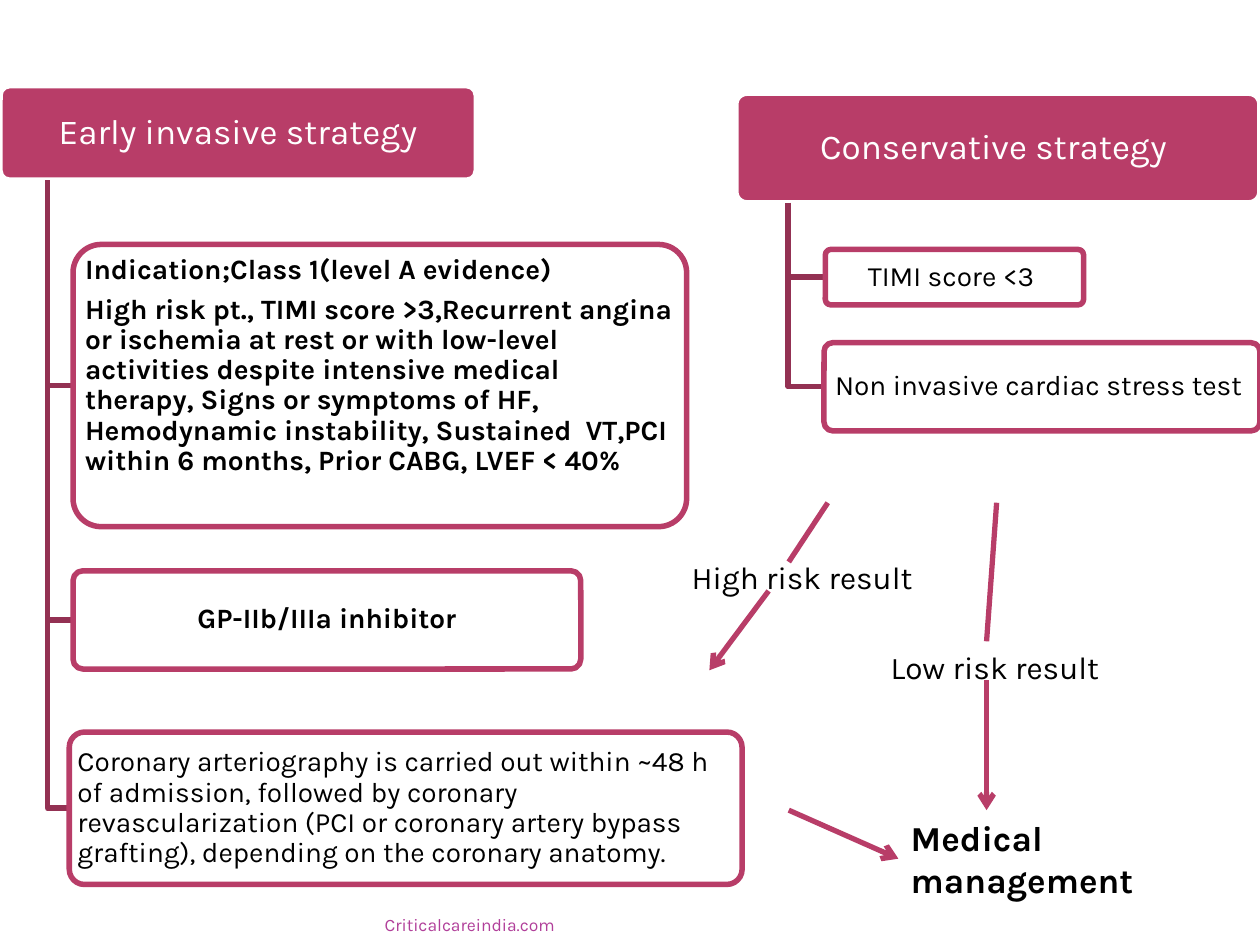
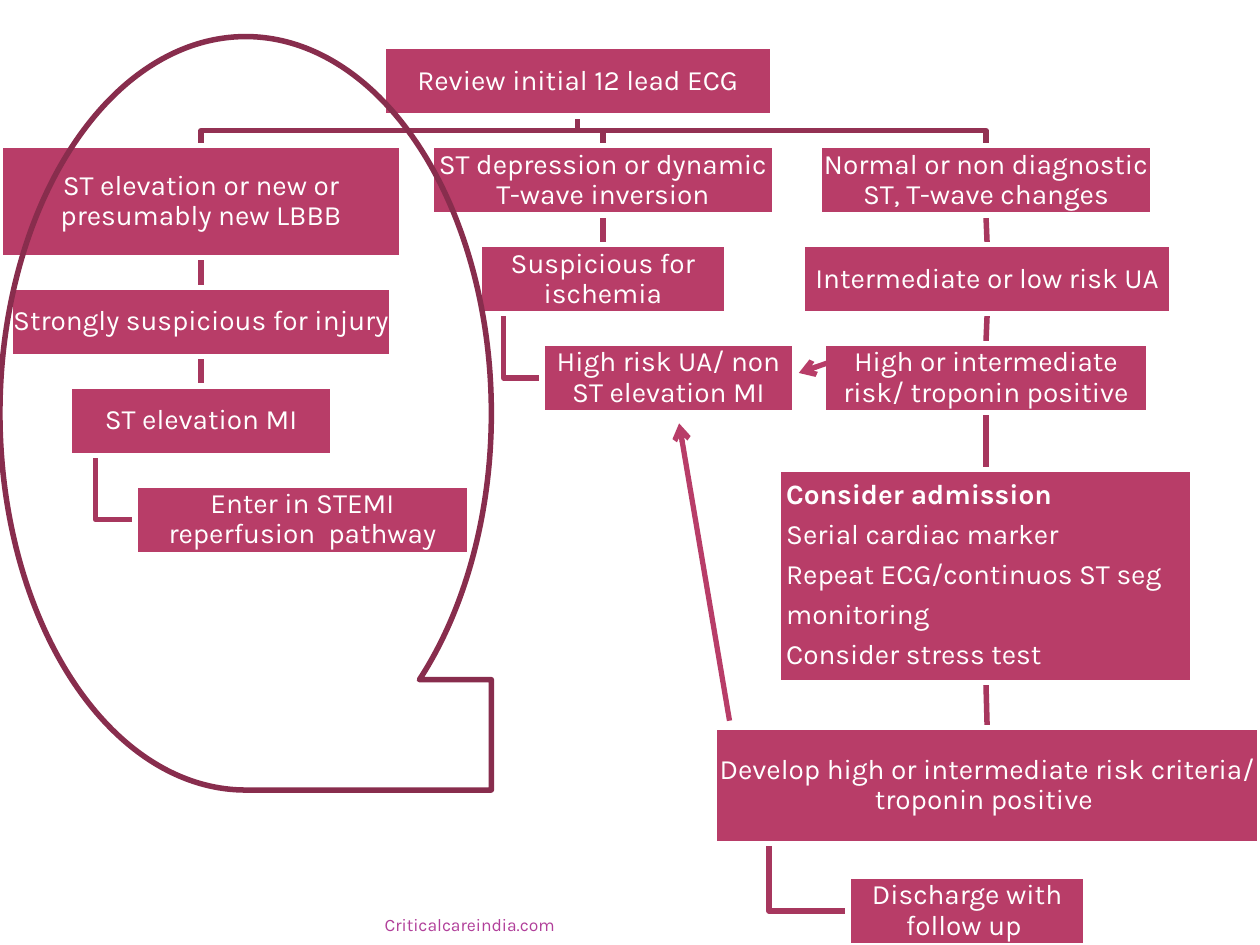
from dataclasses import dataclass
from itertools import pairwise
from typing import NamedTuple

from lxml.etree import SubElement
from pptx import Presentation
from pptx.dml.color import RGBColor
from pptx.enum.shapes import MSO_CONNECTOR, MSO_SHAPE
from pptx.enum.text import MSO_ANCHOR, MSO_AUTO_SIZE, PP_ALIGN
from pptx.oxml.ns import qn
from pptx.shapes.autoshape import Shape
from pptx.shapes.connector import Connector
from pptx.slide import Slide
from pptx.util import Emu, Inches, Pt

# Slide grid: 100 columns by 75 rows
SLIDE_WIDTH, SLIDE_HEIGHT = Inches(10), Inches(7.5)
COLUMNS, ROWS = 100, 75
BOTTOM, LEFT, TOP = 2, 1, 0  # connection sites


@dataclass(frozen=True)
class Theme:
    font: str = "Karla"
    white: str = "FFFFFF"
    black: str = "000000"
    rose: str = "B83D68"
    trunk: str = "933153"
    branch: str = "A7375E"
    outline: str = "882D4D"
    footer: str = "B13F9A"
    heading_size: int = 20
    label_size: int = 18
    body_size: int = 16
    footer_size: int = 10
    box_line: float = 3.15
    arrow_line: float = 3
    line_spacing: float = 0.9
    space_after: float = 0.35  # share of the type size


THEME = Theme()


class Style(NamedTuple):
    preset: MSO_SHAPE
    fill: str
    line: str
    colour: str
    size: int
    side_margin: float
    edge_margin: float


HEADING = Style(MSO_SHAPE.ROUNDED_RECTANGLE, THEME.rose, THEME.white,
                THEME.white, THEME.heading_size, 0.04, 0.03)
DETAIL = Style(MSO_SHAPE.ROUNDED_RECTANGLE, THEME.white, THEME.rose,
               THEME.black, THEME.body_size, 0.03, 0.02)
STEP = Style(MSO_SHAPE.RECTANGLE, THEME.rose, THEME.white,
             THEME.white, THEME.body_size, 0.01, 0.01)


@dataclass(frozen=True)
class Box:
    lines: tuple[str, ...]
    left: float
    top: float
    width: float
    height: float
    bold_lines: int = 0
    centred: bool = True
    anchor: MSO_ANCHOR = MSO_ANCHOR.MIDDLE


class Step(NamedTuple):
    lines: tuple[str, ...]
    left: float
    width: float
    height: float = 5.5
    gap: float = 2.35  # rows above the step
    bold_lines: int = 0
    centred: bool = True


class Label(NamedTuple):
    lines: tuple[str, ...]
    left: float
    top: float
    width: float
    height: float
    size: int = THEME.label_size
    bold: bool = False


class Arrow(NamedTuple):
    start: tuple[float, float]
    end: tuple[float, float]
    head: bool = True


# Grid and drawing helpers
def across(columns: float) -> Emu:
    return Emu(round(SLIDE_WIDTH * columns / COLUMNS))


def down(rows: float) -> Emu:
    return Emu(round(SLIDE_HEIGHT * rows / ROWS))


def colour(value: str) -> RGBColor:
    return RGBColor.from_string(value)


def write(shape: Shape, lines: tuple[str, ...], size: int, text_colour: str,
          alignment: PP_ALIGN = PP_ALIGN.LEFT, bold_lines: int = 0) -> None:
    frame = shape.text_frame
    frame.text = "\n".join(lines)
    for index, paragraph in enumerate(frame.paragraphs):
        paragraph.alignment = alignment
        paragraph.font.name = THEME.font
        paragraph.font.size = Pt(size)
        paragraph.font.bold = index < bold_lines
        paragraph.font.color.rgb = colour(text_colour)


def draw_box(slide: Slide, box: Box, style: Style) -> Shape:
    shape = slide.shapes.add_shape(style.preset, across(box.left), down(box.top),
                                   across(box.width), down(box.height))
    shape.shadow.inherit = False
    if style.preset == MSO_SHAPE.ROUNDED_RECTANGLE:
        shape.adjustments[0] = 0.1
    shape.fill.solid()
    shape.fill.fore_color.rgb = colour(style.fill)
    shape.line.color.rgb = colour(style.line)
    shape.line.width = Pt(THEME.box_line)
    frame = shape.text_frame
    frame.word_wrap = True
    frame.vertical_anchor = box.anchor
    frame.margin_left = Inches(style.side_margin if box.centred or style != STEP else 0.06)
    frame.margin_right = Inches(style.side_margin)
    frame.margin_top = frame.margin_bottom = Inches(style.edge_margin)
    alignment = PP_ALIGN.CENTER if box.centred else PP_ALIGN.LEFT
    write(shape, box.lines, style.size, style.colour, alignment, box.bold_lines)
    for paragraph in frame.paragraphs:
        paragraph.line_spacing = THEME.line_spacing
        paragraph.space_after = Pt(style.size * THEME.space_after)
    return shape


def draw_label(slide: Slide, label: Label) -> Shape:
    shape = slide.shapes.add_textbox(across(label.left), down(label.top),
                                     across(label.width), down(label.height))
    shape.text_frame.word_wrap = False
    shape.text_frame.auto_size = MSO_AUTO_SIZE.SHAPE_TO_FIT_TEXT
    write(shape, label.lines, label.size, THEME.black,
          bold_lines=len(label.lines) if label.bold else 0)
    return shape


def draw_line(slide: Slide, start: tuple[int, int], end: tuple[int, int],
              line_colour: str, width: float, head: bool = False) -> Connector:
    connector = slide.shapes.add_connector(MSO_CONNECTOR.STRAIGHT, *start, *end)
    connector.line.color.rgb = colour(line_colour)
    connector.line.width = Pt(width)
    properties = connector.element.spPr
    if head:
        SubElement(properties.find(qn("a:ln")), qn("a:tailEnd"), type="arrow")
    SubElement(properties, qn("a:effectLst"))
    return connector


def draw_arrow(slide: Slide, arrow: Arrow) -> Connector:
    (start_x, start_y), (end_x, end_y) = arrow.start, arrow.end
    return draw_line(slide, (across(start_x), down(start_y)), (across(end_x), down(end_y)),
                     THEME.rose, THEME.arrow_line, arrow.head)


def draw_elbow(slide: Slide, points: list[tuple[int, int]], line_colour: str) -> Shape:
    builder = slide.shapes.build_freeform(*points[0], scale=1.0)
    builder.add_line_segments(points[1:], close=False)
    shape = builder.convert_to_shape()
    shape.shadow.inherit = False
    shape.fill.background()
    shape.line.color.rgb = colour(line_colour)
    shape.line.width = Pt(THEME.box_line)
    return shape


def hang(slide: Slide, parent: Shape, child: Shape, line_colour: str) -> Shape:
    """Elbow from a tenth along the parent's base to the child's left side."""
    drop = parent.left + parent.width // 10
    middle = child.top + child.height // 2
    return draw_elbow(slide, [(drop, parent.top + parent.height), (drop, middle),
                              (child.left, middle)], line_colour)


def bottom_middle(shape: Shape) -> tuple[int, int]:
    return shape.left + shape.width // 2, shape.top + shape.height


def top_middle(shape: Shape) -> tuple[int, int]:
    return shape.left + shape.width // 2, shape.top


def draw_footer(slide: Slide) -> None:
    shape = slide.shapes.add_textbox(across(5), down(71.7), across(40), down(2.5))
    frame = shape.text_frame
    frame.word_wrap = True
    frame.vertical_anchor = MSO_ANCHOR.BOTTOM
    frame.margin_top = frame.margin_bottom = 0
    write(shape, ("Criticalcareindia.com",), THEME.footer_size, THEME.footer, PP_ALIGN.RIGHT)


# Slide 1: the two strategies
STRATEGIES = (
    (Box(("Early invasive strategy",), 0, 6.8, 37.8, 7.5), (
        Box(("Indication;Class 1(level A evidence)",
             "High risk pt., TIMI score >3,Recurrent angina or ischemia at rest or with "
             "low-level activities despite intensive medical therapy, Signs or symptoms of HF, "
             "Hemodynamic instability, Sustained  VT,PCI within 6 months, Prior CABG, "
             "LVEF < 40%"), 5.8, 19.4, 48.7, 22.4, 2, False, MSO_ANCHOR.TOP),
        Box(("GP-IIb/IIIa inhibitor",), 5.8, 45.3, 40.3, 7.8, 1),
        Box(("Coronary arteriography is carried out within ~48 h of admission, followed by "
             "coronary revascularization (PCI or coronary artery bypass grafting), depending "
             "on the coronary anatomy.",), 5.5, 58.1, 53.4, 12.1, centred=False),
    )),
    (Box(("Conservative strategy ",), 58.4, 7.4, 41.6, 8.7), (
        Box(("TIMI score <3 ",), 65.5, 19.8, 20.5, 4.4),
        Box(("Non invasive cardiac stress test ",), 65.4, 27.2, 34.6, 7),
    )),
)
RISK_LABELS = (
    Label(("High risk result",), 53.9, 43.8, 20.5, 4),
    Label(("Low risk result",), 69.7, 50.9, 20, 4),
)
MEDICAL_MANAGEMENT = Label(("Medical", "management"), 71.3, 64.3, 19.7, 7.7,
                           THEME.heading_size, True)
RISK_ARROWS = (
    Arrow((65.7, 39.9), (62.6, 44.6), False),
    Arrow((61, 46.9), (56.3, 53.2)),
    Arrow((79.1, 39.9), (78.3, 50.9), False),
    Arrow((78.3, 54), (78.3, 64.3)),
)
TO_MANAGEMENT = Arrow((62.6, 64.3), (71.3, 68.1))


def build_strategies(slide: Slide) -> None:
    for heading, details in STRATEGIES:
        parent = draw_box(slide, heading, HEADING)
        for detail in details:
            child = draw_box(slide, detail, DETAIL)
            child.element.addprevious(hang(slide, parent, child, THEME.trunk).element)
    management = draw_label(slide, MEDICAL_MANAGEMENT)
    for label in RISK_LABELS:
        draw_label(slide, label)
    for arrow in RISK_ARROWS:
        draw_arrow(slide, arrow)
    draw_arrow(slide, TO_MANAGEMENT).end_connect(management, LEFT)


# Slide 2: the ECG pathway; the last step of each branch hangs from the one before
REVIEW = Box(("Review initial 12 lead ECG",), 30.4, 3.7, 30.9, 5.5)
BRANCHES = (
    (Step(("ST elevation or new or presumably new LBBB",), 0, 31.9, 8.9),
     Step(("Strongly suspicious for injury",), 0.8, 30.3),
     Step(("ST elevation MI",), 5.5, 20.9),
     Step(("Enter in STEMI reperfusion  pathway",), 10.7, 26.6)),
    (Step(("ST depression or dynamic T-wave inversion",), 34.2, 27.3),
     Step(("Suspicious for ischemia",), 38, 19.7),
     Step(("High risk UA/ non ST elevation MI",), 43, 20.1)),
    (Step(("Normal or non diagnostic ST, T-wave changes",), 65, 26.5),
     Step(("Intermediate or low risk UA",), 63.7, 29.3),
     Step(("High or intermediate risk/ troponin positive",), 65.3, 25.9),
     Step(("Consider admission", "Serial cardiac marker", "Repeat ECG/continuos ST seg",
           "monitoring", "Consider stress test"), 61.8, 32.9, 16.9, 4.5, 1, False),
     Step(("Develop high or intermediate risk criteria/ troponin positive ",),
          56.7, 43.3, 9.2, 3.6),
     Step(("Discharge with follow up ",), 67.3, 18.9, gap=2.6)),
)
TO_HIGH_RISK = (Arrow((57.9, 57.2), (53.9, 33.6)), Arrow((65.7, 28.8), (63.4, 29.6)))


def draw_branch(slide: Slide, steps: tuple[Step, ...], start: float) -> list[Shape]:
    shapes, bottom = [], start
    for step in steps:
        top = bottom + step.gap
        shapes.append(draw_box(slide, Box(step.lines, step.left, top, step.width, step.height,
                                          step.bold_lines, step.centred), STEP))
        bottom = top + step.height
    return shapes


def build_pathway(slide: Slide) -> None:
    review = draw_box(slide, REVIEW, STEP)
    links = []
    for steps in BRANCHES:
        shapes = draw_branch(slide, steps, REVIEW.top + REVIEW.height)
        start, end = bottom_middle(review), top_middle(shapes[0])
        bar = (start[1] + end[1]) // 2
        links.append(draw_elbow(slide, [start, (start[0], bar), (end[0], bar), end],
                                THEME.trunk))
        for upper, lower in pairwise(shapes[:-1]):
            link = draw_line(slide, bottom_middle(upper), top_middle(lower),
                             THEME.branch, THEME.box_line)
            link.begin_connect(upper, BOTTOM)
            link.end_connect(lower, TOP)
            links.append(link)
        links.append(hang(slide, shapes[-2], shapes[-1], THEME.branch))
    for link in links:  # lines lie behind the boxes
        review.element.addprevious(link.element)
    for arrow in TO_HIGH_RISK:
        draw_arrow(slide, arrow)

    # Loop around the ST elevation branch
    loop = slide.shapes.add_shape(MSO_SHAPE.FLOWCHART_SEQUENTIAL_ACCESS_STORAGE,
                                  across(0), down(2.9), across(39), down(59.8))
    loop.shadow.inherit = False
    loop.fill.background()
    loop.line.color.rgb = colour(THEME.outline)
    loop.line.width = Pt(THEME.box_line)


def main() -> None:
    presentation = Presentation()
    presentation.slide_width, presentation.slide_height = SLIDE_WIDTH, SLIDE_HEIGHT
    for build in (build_strategies, build_pathway):
        slide = presentation.slides.add_slide(presentation.slide_layouts[6])
        build(slide)
        draw_footer(slide)
    presentation.save("out.pptx")


if __name__ == "__main__":
    main()
